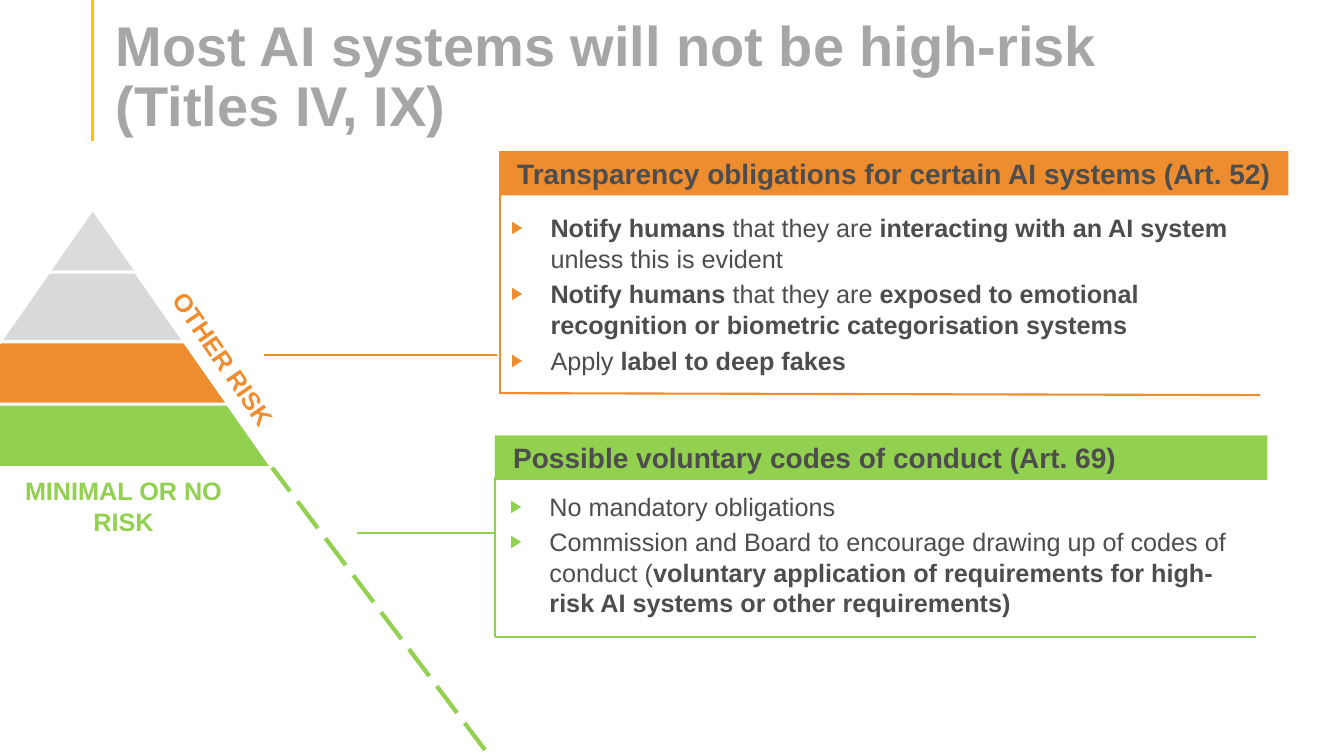
"""Builds the slide on AI systems that are not high-risk."""
from lxml import etree
from pptx import Presentation
from pptx.dml.color import RGBColor
from pptx.enum.dml import MSO_LINE
from pptx.enum.shapes import MSO_CONNECTOR, MSO_SHAPE
from pptx.enum.text import MSO_ANCHOR, PP_ALIGN
from pptx.oxml.ns import qn
from pptx.util import Emu, Pt

SCALE = 9144
STRAIGHT = MSO_CONNECTOR.STRAIGHT
RECTANGLE, TRAPEZOID = MSO_SHAPE.RECTANGLE, MSO_SHAPE.TRAPEZOID
TOP, BOTTOM = MSO_ANCHOR.TOP, MSO_ANCHOR.BOTTOM
LEFT, CENTER = PP_ALIGN.LEFT, PP_ALIGN.CENTER
LONG_DASH = MSO_LINE.LONG_DASH

COLOURS = {
    "white": "FFFFFF", "yellow": "FFC000", "title": "A6A6A6", "text": "4D4D4D",
    "tip": "DBDBDB", "grey": "D9D9D9", "orange": "ED8D2F", "green": "92D050",
}


def px(length):
    """Turn pixels into EMU."""
    return Emu(length * SCALE)


def apply(target, values):
    """Set every attribute in values on target."""
    for name, value in values.items():
        setattr(target, name, value)


class Page:
    """Holds the style and the current slide."""

    def __init__(self, deck, font):
        self.slide = deck.slides.add_slide(deck.slide_layouts[6])
        self.font = font

    def colour(self, name):
        """Look up a colour by name."""
        return RGBColor.from_string(COLOURS[name])

    def line(self, start, end, colour, width=1.5, dash=None):
        """Draw a straight line."""
        line = self.slide.shapes.add_connector(STRAIGHT, *map(px, start + end))
        line.line.color.rgb = self.colour(colour)
        apply(line.line, {"width": Pt(width), "dash_style": dash})
        etree.SubElement(line._element.spPr, qn("a:effectLst"))

    def shape(self, kind, place, fill):
        """Draw a filled shape without outline or shadow."""
        shape = self.slide.shapes.add_shape(kind, *map(px, place))
        shape.shadow.inherit = False
        shape.fill.solid()
        shape.fill.fore_color.rgb = self.colour(fill)
        shape.line.fill.background()
        return shape

    def tier(self, place, fill):
        """Draw one tier of the pyramid."""
        tier = self.shape(TRAPEZOID, place, fill)
        tier.adjustments[0] = 0.7
        tier.line.color.rgb = self.colour("white")
        tier.line.width = Pt(2.25)

    def fill_text(self, box, paragraphs, size, colour, insets=(10, 5, 10, 5),
                  anchor=TOP, bullet=None, **layout):
        """Fill a box with paragraphs, in which stars enclose bold words."""
        frame = box.text_frame
        sides = ("margin_left", "margin_top", "margin_right", "margin_bottom")
        apply(frame, {"word_wrap": True, "vertical_anchor": anchor,
                      **dict(zip(sides, map(px, insets)))})
        style = {"name": self.font, "size": Pt(size)}
        for index, text in enumerate(paragraphs):
            para = frame.add_paragraph() if index else frame.paragraphs[0]
            apply(para, {"alignment": LEFT, **layout})
            if bullet:
                self.bullet(para, bullet)
            for part, words in enumerate(text.split("*")):
                for row, piece in enumerate(words.split("\n")):
                    if row:
                        para.add_line_break()
                    if piece:
                        span = para.add_run()
                        span.text = piece
                        apply(span.font, {**style, "bold": part % 2 == 1})
                        span.font.color.rgb = self.colour(colour)

    def bullet(self, para, colour):
        """Give a paragraph a coloured triangle and a hanging indent."""
        properties = para._p.get_or_add_pPr()
        properties.set("marL", str(px(39)))
        properties.set("indent", str(px(-39)))
        tint = etree.SubElement(properties, qn("a:buClr"))
        etree.SubElement(tint, qn("a:srgbClr"), val=COLOURS[colour])
        etree.SubElement(properties, qn("a:buSzPct"), val="70000")
        etree.SubElement(properties, qn("a:buFont"), typeface=self.font)
        etree.SubElement(properties, qn("a:buChar"), char="▶")

    def text(self, place, paragraphs, size, colour, rotation=0, **layout):
        """Add a text box."""
        box = self.slide.shapes.add_textbox(*map(px, place))
        box.rotation = rotation
        self.fill_text(box, paragraphs, size, colour, **layout)

    def header(self, place, text, fill):
        """Add a coloured heading bar."""
        bar = self.shape(RECTANGLE, place, fill)
        self.fill_text(bar, [f"*{text}*"], 20, "text", insets=(18, 5, 10, 5))

    def points(self, place, paragraphs, colour):
        """Add a bulleted list."""
        self.text(place, paragraphs, 18, "text", insets=(0, 0, 10, 5),
                  bullet=colour, space_after=Pt(4))


def main():
    """Build and save the deck."""
    deck = Presentation()
    apply(deck, {"slide_width": px(1333), "slide_height": px(750)})
    page = Page(deck, "Arial")

    page.line((92, 0), (92, 140), "yellow", 2.25)
    page.text((105, 14, 1151, 124),
              ["*Most AI systems will not be high-risk\n(Titles IV, IX)*"],
              40, "title", insets=(10, 5, 10, 0), anchor=BOTTOM, line_spacing=0.9)

    for place, fill in (
        ((48, 207, 88, 63), "tip"),
        ((0, 270, 183, 69), "grey"),
        ((-44, 339, 271, 63), "orange"),
        ((-88, 401, 358, 63), "green"),
    ):
        page.tier(place, fill)
    page.line((481, 744), (270, 464), "green", 3, LONG_DASH)
    page.text((126, 336, 191, 40), ["*OTHER RISK*"], 18, "orange",
              rotation=55.4, alignment=CENTER)
    page.text((9, 467, 227, 71), ["*MINIMAL OR NO RISK*"], 18, "green",
              alignment=CENTER)

    page.points((507, 211, 751, 168), [
        "*Notify humans* that they are *interacting with an AI system* "
        "unless this is evident",
        "*Notify humans* that they are *exposed to emotional recognition "
        "or biometric categorisation systems*",
        "Apply *label to deep fakes*",
    ], "orange")
    page.header((495, 150, 783, 44),
                "Transparency obligations for certain AI systems (Art. 52)", "orange")
    page.header((491, 432, 766, 44),
                "Possible voluntary codes of conduct (Art. 69)", "green")
    page.points((506, 487, 737, 132), [
        "No mandatory obligations",
        "Commission and Board to encourage drawing up of codes of conduct "
        "(*voluntary application of requirements for high-risk AI systems "
        "or other requirements)*",
    ], "green")

    for start, end, colour in (
        ((262, 352), (493, 352), "orange"),
        ((496, 192), (496, 390), "orange"),
        ((495, 390), (1250, 392), "orange"),
        ((354, 529), (491, 529), "green"),
        ((491, 473), (491, 632), "green"),
        ((491, 632), (1246, 632), "green"),
    ):
        page.line(start, end, colour)
    deck.save("out.pptx")


if __name__ == "__main__":
    main()
